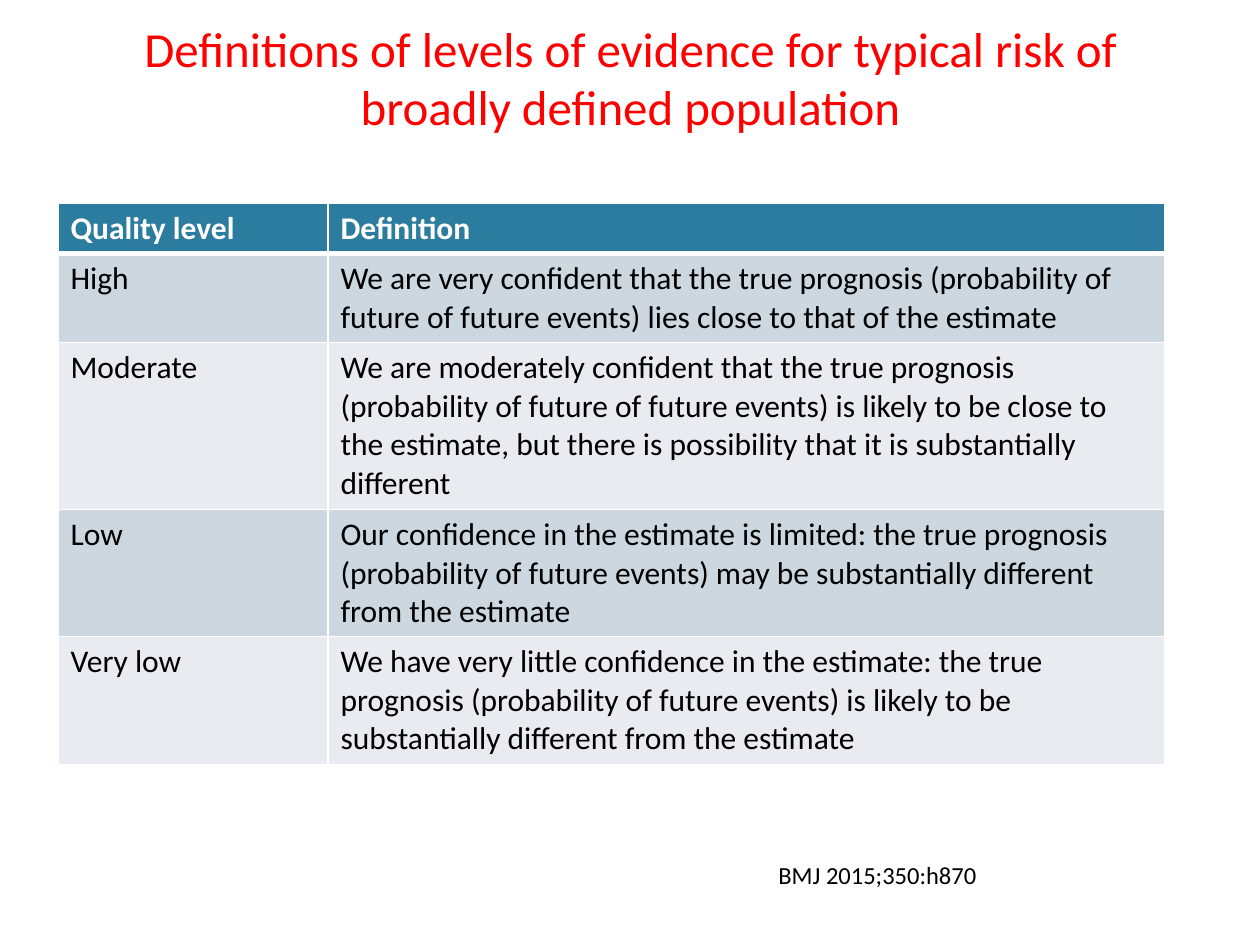
from lxml import etree
from pptx import Presentation
from pptx import util as u
from pptx.dml.color import RGBColor
from pptx.enum import text
from pptx.oxml import ns

PX = 914400 // 126


def rgb(hex_color):
    return RGBColor.from_string(hex_color)


def write(tf, content, size=18, color="000000", bold=False, align=text.PP_ALIGN.LEFT):
    tf.word_wrap = True
    p = tf.paragraphs[0]
    p.alignment = align
    r = p.add_run()
    r.text = content
    r.font.name = "Calibri"
    r.font.size = u.Pt(size)
    r.font.bold = bold
    r.font.color.rgb = rgb(color)


prs = Presentation()
prs.slide_width, prs.slide_height = 1260 * PX, 945 * PX
s = prs.slides.add_slide(prs.slide_layouts[6])

title = s.shapes.add_textbox(76 * PX, 15 * PX, 1109 * PX, 127 * PX)
title.text_frame.vertical_anchor = text.MSO_ANCHOR.BOTTOM
write(title.text_frame,
      "Definitions of levels of evidence for typical risk of broadly defined population",
      size=28, color="FF0000", align=text.PP_ALIGN.CENTER)

rows = [
    ("Quality level", "Definition"),
    ("High", "We are very confident that the true prognosis (probability of future of "
             "future events) lies close to that of the estimate"),
    ("Moderate", "We are moderately confident that the true prognosis (probability of future "
                 "of future events) is likely to be close to the estimate, but there is "
                 "possibility that it is substantially different"),
    ("Low", "Our confidence in the estimate is limited: the true prognosis (probability of "
            "future events) may be substantially different from the estimate"),
    ("Very low", "We have very little confidence in the estimate: the true prognosis "
                 "(probability of future events) is likely to be substantially different "
                 "from the estimate"),
]
col_widths = [270, 837]
row_heights = [50, 89, 167, 127, 128]
table = s.shapes.add_table(len(rows), 2, 58 * PX, 203 * PX,
                           sum(col_widths) * PX, sum(row_heights) * PX).table
for column, width in zip(table.columns, col_widths):
    column.width = width * PX

for i, (row, height) in enumerate(zip(rows, row_heights)):
    table.rows[i].height = height * PX
    header = i == 0
    fill = "2C7C9F" if header else ("E8ECF0", "CDD7DF")[i % 2]
    for j, content in enumerate(row):
        cell = table.cell(i, j)
        write(cell.text_frame, content, color="FFFFFF" if header else "000000", bold=header)
        tcPr = cell._tc.get_or_add_tcPr()
        for side in "LRTB":
            thick = (i, side) in ((0, "B"), (1, "T"))
            ln = etree.SubElement(tcPr, ns.qn(f"a:ln{side}"), w=str(u.Pt(3 if thick else 1)))
            solid = etree.SubElement(ln, ns.qn("a:solidFill"))
            etree.SubElement(solid, ns.qn("a:srgbClr"), val="FFFFFF")
        cell.fill.solid()
        cell.fill.fore_color.rgb = rgb(fill)

citation = s.shapes.add_textbox(766 * PX, 854 * PX, 401 * PX, 50 * PX)
write(citation.text_frame, "BMJ 2015;350:h870", size=14)

prs.save("out.pptx")
